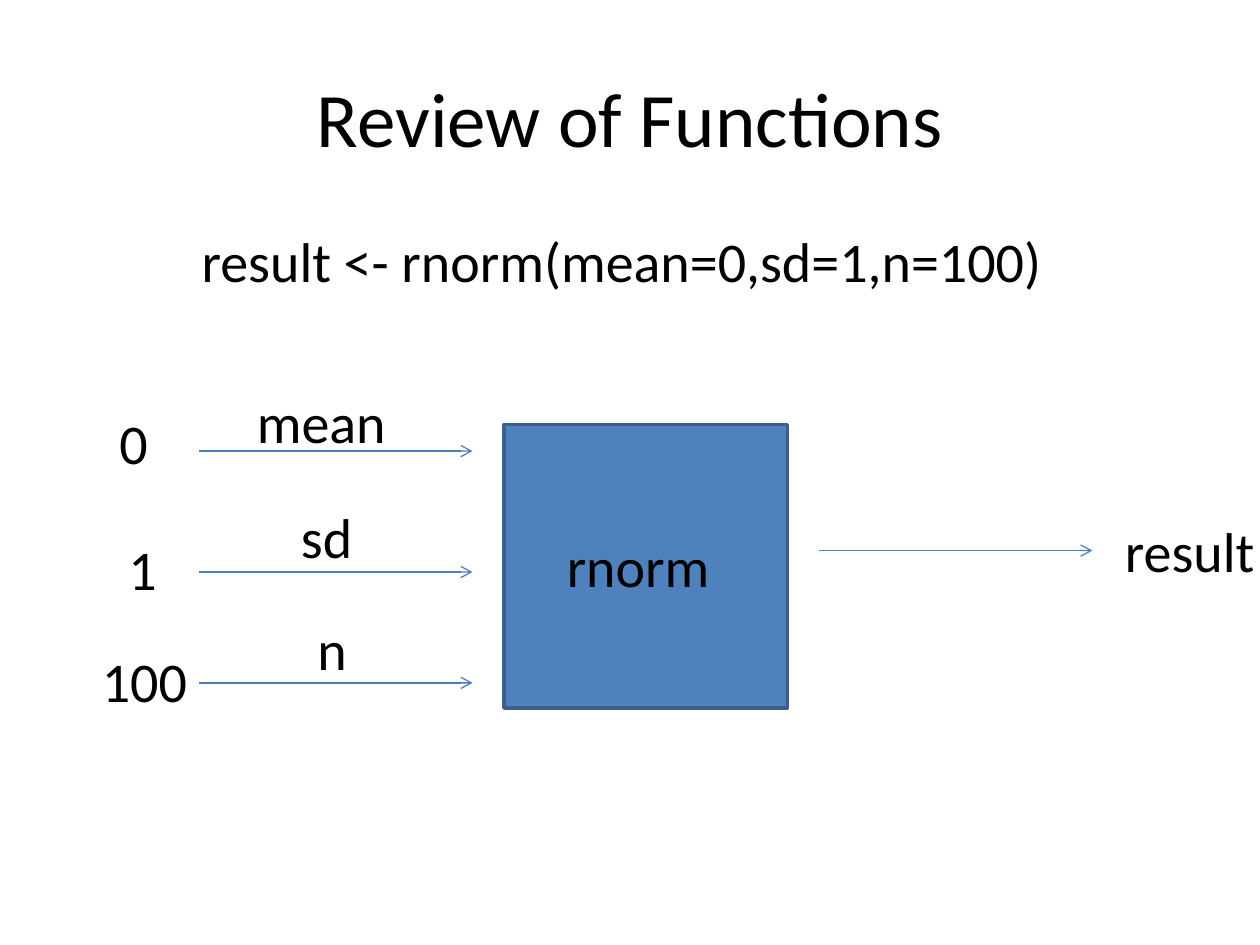
import dataclasses

import lxml.etree
import pptx
import pptx.dml.color
import pptx.enum.shapes
import pptx.enum.text
import pptx.oxml.ns
import pptx.util

Inches = pptx.util.Inches
Pt = pptx.util.Pt
COLORS = {"back": "FFFFFF", "text": "000000", "box": "4F81BD",
          "edge": "3A5F8C", "arrow": "4B7EBC"}
ALIGN = pptx.enum.text.PP_ALIGN


@dataclasses.dataclass
class Label:
    text: str
    left: float
    top: float
    width: float = 1.46


@dataclasses.dataclass
class Arrow:
    left: float
    top: float
    length: float = 2.17


@dataclasses.dataclass
class Input:
    value: Label
    name: Label
    arrow: Arrow


INPUTS = [
    Input(Label("0", 0.85, 3.19, 0.73), Label("mean", 1.94, 3.03), Arrow(1.58, 3.58)),
    Input(Label("1", 0.92, 4.19), Label("sd", 2.29, 3.94), Arrow(1.58, 4.54)),
    Input(Label("100", 0.71, 5.08), Label("n", 2.42, 4.83), Arrow(1.58, 5.42)),
]


def color(name: str) -> pptx.dml.color.RGBColor:
    return pptx.dml.color.RGBColor.from_string(COLORS[name])


def write(frame, text: str, *, size: int = 32, align=ALIGN.LEFT,
          anchor=pptx.enum.text.MSO_ANCHOR.TOP, wrap: bool = True) -> None:
    frame.word_wrap = wrap
    frame.vertical_anchor = anchor
    para = frame.paragraphs[0]
    para.alignment = align
    run = para.add_run()
    run.text = text
    run.font.name = "Calibri"
    run.font.size = Pt(size)
    run.font.color.rgb = color("text")


def place(shape, left: float, top: float, width: float, height: float) -> None:
    shape.left, shape.top = Inches(left), Inches(top)
    shape.width, shape.height = Inches(width), Inches(height)


def draw_label(slide, label: Label) -> None:
    box = slide.shapes.add_textbox(0, 0, 0, 0)
    place(box, label.left, label.top, label.width, 0.64)
    write(box.text_frame, label.text)


def draw_arrow(slide, arrow: Arrow) -> None:
    line = slide.shapes.add_connector(
        pptx.enum.shapes.MSO_CONNECTOR.STRAIGHT, Inches(arrow.left), Inches(arrow.top),
        Inches(arrow.left + arrow.length), Inches(arrow.top))
    line.line.color.rgb = color("arrow")
    line.line.width = Pt(0.75)
    qn = pptx.oxml.ns.qn
    lxml.etree.SubElement(line.line._get_or_add_ln(), qn("a:tailEnd"), type="arrow")
    lxml.etree.SubElement(line._element.spPr, qn("a:effectLst"))


def draw_box(slide) -> None:
    box = slide.shapes.add_shape(pptx.enum.shapes.MSO_SHAPE.RECTANGLE, 0, 0, 0, 0)
    place(box, 4, 3.37, 2.25, 2.25)
    box.shadow.inherit = False
    box.fill.solid()
    box.fill.fore_color.rgb = color("box")
    box.line.color.rgb = color("edge")
    box.line.width = Pt(2)


def draw_code(slide) -> None:
    code = slide.shapes.add_textbox(0, 0, 0, 0)
    place(code, 0.5, 1.75, 9, 4.95)
    code.text_frame.margin_left = Inches(1.1)
    write(code.text_frame, "result <- rnorm(mean=0,sd=1,n=100)")


def main() -> None:
    deck = pptx.Presentation()
    deck.slide_width, deck.slide_height = Inches(10), Inches(7.5)
    slide = deck.slides.add_slide(deck.slide_layouts[5])
    slide.background.fill.solid()
    slide.background.fill.fore_color.rgb = color("back")

    title = slide.shapes.title
    place(title, 0.5, 0.3, 9, 1.25)
    write(title.text_frame, "Review of Functions", size=44, align=ALIGN.CENTER,
          anchor=pptx.enum.text.MSO_ANCHOR.MIDDLE)
    draw_code(slide)
    draw_box(slide)
    draw_label(slide, Label("rnorm", 4.4, 4.17))
    draw_label(slide, Label("result", 8.83, 4.05))
    draw_arrow(slide, Arrow(6.5, 4.37))
    for item in INPUTS:
        draw_arrow(slide, item.arrow)
        draw_label(slide, item.name)
        draw_label(slide, item.value)
    deck.save("out.pptx")


if __name__ == "__main__":
    main()
